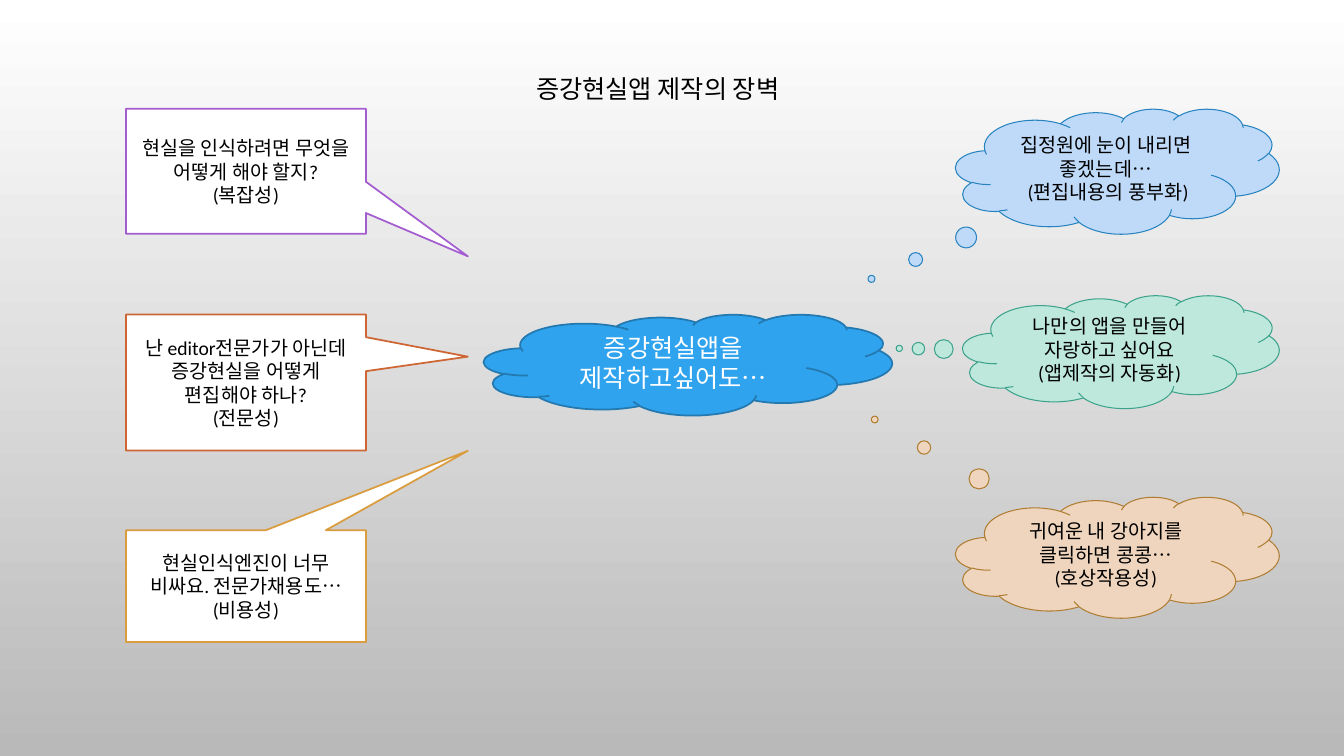
import pptx
import pptx.util
from pptx.dml.color import RGBColor
from pptx.enum.shapes import MSO_SHAPE
from pptx.enum.text import MSO_ANCHOR, MSO_AUTO_SIZE, PP_ALIGN

# Grid: 75 rows down the slide, with square cells.
CELL = pptx.util.Inches(0.1)
BLACK, WHITE = "000000", "FFFFFF"

# Rows of a region: top, height, tip of the callout, colours, text
BARRIERS = [
    (0, 12.4, 0.68, "A35DD1",
     "현실을 인식하려면 무엇을 어떻게 해야 할지?\n(복잡성)"),
    (20.4, 13.5, -0.19, "CE6633",
     "난 editor전문가가 아닌데 증강현실을 어떻게 편집해야 하나?\n(전문성)"),
    (41.8, 11.1, -1.21, "D99C3F",
     "현실인식엔진이 너무 비싸요. 전문가채용도…\n(비용성)"),
]
WISHES = [
    (0, 12.4, 32.1, (-0.76, 0.86), "BFDAF9", "2683BF",
     "집정원에 눈이 내리면 좋겠는데…\n (편집내용의 풍부화)"),
    (18.5, 11.2, 31.4, (-0.7, -0.03), "BDE8DB", "3CA28B",
     "나만의 앱을 만들어 자랑하고 싶어요\n(앱제작의 자동화)"),
    (38.5, 12, 32.1, (-0.75, -1.14), "EFD5BD", "AE7D32",
     "귀여운 내 강아지를 클릭하면 콩콩…\n(호상작용성)"),
]


def color(hex_string):
    return RGBColor.from_string(hex_string)


def cells(box):
    """Turn grid cells into slide lengths."""
    return [round(value * CELL) for value in box]


def write(frame, text, size, ink, align):
    frame.text = text
    font_format = {"name": "Calibri", "size": pptx.util.Pt(size)}
    for para in frame.paragraphs:
        para.alignment = align
        for span in para.runs:
            for name, value in font_format.items():
                setattr(span.font, name, value)
            span.font.color.rgb = color(ink)


def add_bubble(page, kind, box, text, fill, line, width, size=14, ink=BLACK, tip=()):
    """Add a filled shape with centred text; tip is the callout's point."""
    bubble = page.shapes.add_shape(kind, *cells(box))
    bubble.shadow.inherit = False
    for index, value in enumerate(tip):
        bubble.adjustments[index] = value
    bubble.fill.solid()
    bubble.fill.fore_color.rgb = color(fill)
    bubble.line.color.rgb = color(line)
    bubble.line.width = pptx.util.Pt(width)
    frame = bubble.text_frame
    frame.word_wrap = True
    frame.vertical_anchor = MSO_ANCHOR.MIDDLE
    write(frame, text, size, ink, PP_ALIGN.CENTER)


def paint_background(page):
    fill = page.background.fill
    fill.gradient()
    fill.gradient_angle = 270
    for stop, shade, position in zip(fill.gradient_stops, (WHITE, "B9B9B9"), (0, 1)):
        stop.color.rgb = color(shade)
        stop.position = position


def add_title(page, box):
    frame = page.shapes.add_textbox(*cells(box)).text_frame
    frame.word_wrap = False
    frame.auto_size = MSO_AUTO_SIZE.SHAPE_TO_FIT_TEXT
    write(frame, "증강현실앱 제작의 장벽", 18, BLACK, PP_ALIGN.LEFT)


def add_core(page, box):
    add_bubble(page, MSO_SHAPE.CLOUD, box, "증강현실앱을 제작하고싶어도…",
               "2FA3EE", "2379B0", 1.25, size=18, ink=WHITE)


def add_barriers(page, left, top, width):
    for row, height, tip, line, text in BARRIERS:
        add_bubble(page, MSO_SHAPE.RECTANGULAR_CALLOUT, (left, top + row, width, height),
                   text, WHITE, line, 1.25, tip=(0.925, tip))


def add_wishes(page, right, top):
    """Stack the thought clouds against a common right edge."""
    for row, height, width, tip, fill, line, text in WISHES:
        add_bubble(page, MSO_SHAPE.CLOUD_CALLOUT, (right - width, top + row, width, height),
                   text, fill, line, 0.75, tip=tip)


def main():
    deck = pptx.Presentation()
    deck.slide_width, deck.slide_height = cells((133.33, 75))
    page = deck.slides.add_slide(deck.slide_layouts[6])
    paint_background(page)
    add_core(page, (48, 31.2, 40.5, 10))
    add_barriers(page, left=12.5, top=10.8, width=23.8)
    add_title(page, (52.2, 6.8, 28.7, 4))
    add_wishes(page, right=126.9, top=10.8)
    deck.save("out.pptx")


if __name__ == "__main__":
    main()
